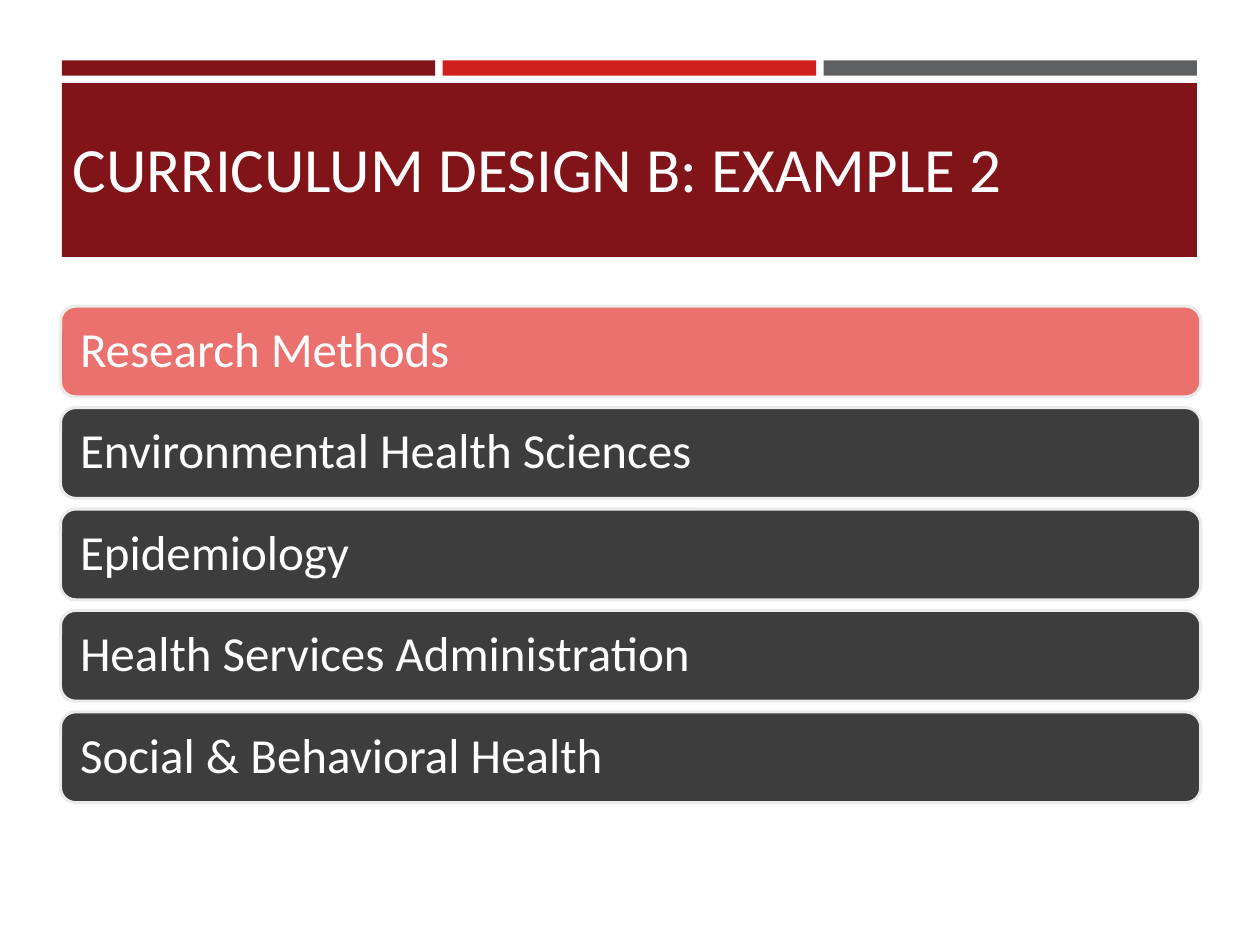
from pptx import Presentation
from pptx.util import Inches, Pt
from pptx.dml.color import RGBColor
from pptx.enum.shapes import MSO_SHAPE as Shape
from pptx.enum.text import MSO_ANCHOR as Anchor, PP_ALIGN as Align

HUES = {"wine": "811419", "red": "D0201C", "gray": "5F6062", "rose": "EB716E",
        "dark": "3D3D3D", "edge": "EBEBEB", "title": "FFFEFF", "white": "FFFFFF"}

deck = Presentation()
deck.slide_width, deck.slide_height = Inches(10), Inches(7.5)
slide = deck.slides.add_slide(deck.slide_layouts[6])


def block(kind, left, top, width, height, hue):
    box = slide.shapes.add_shape(kind, *map(Inches, (left, top, width, height)))
    box.shadow.inherit = False
    box.fill.solid()
    box.fill.fore_color.rgb = RGBColor.from_string(HUES[hue])
    box.line.fill.background()
    return box


def write(box, text, size, hue):
    """Put one left-aligned, vertically centred line into the box."""
    frame = box.text_frame
    frame.word_wrap = True
    frame.vertical_anchor = Anchor.MIDDLE
    frame.text = text
    para = frame.paragraphs[0]
    para.alignment = Align.LEFT
    para.font.name = "Calibri"
    para.font.size = Pt(size)
    para.font.color.rgb = RGBColor.from_string(HUES[hue])
    return frame, para


# Header: three strips over a title band
left, wide, gap = 0.49, 9.01, 0.06
strip = (wide - 2 * gap) / 3
for col, hue in enumerate(("wine", "red", "gray")):
    block(Shape.RECTANGLE, left + col * (strip + gap), 0.48, strip, 0.12, hue)
block(Shape.RECTANGLE, left, 0.66, wide, 1.38, "wine")
title = slide.shapes.add_textbox(*map(Inches, (0.48, 0.77, 9.05, 1.11)))
write(title, "CURRICULUM DESIGN B: EXAMPLE 2", 36, "title")

# Course bars, evenly stacked
first, pitch = 2.43, 0.805
courses = ["Research Methods", "Environmental Health Sciences", "Epidemiology",
           "Health Services Administration", "Social & Behavioral Health"]
for row, course in enumerate(courses):
    bar = block(Shape.ROUNDED_RECTANGLE, 0.48, first + row * pitch, 9.05, 0.72,
                "dark" if row else "rose")
    bar.line.color.rgb = RGBColor.from_string(HUES["edge"])
    bar.line.width = Pt(1.75)
    frame, para = write(bar, course, 28, "white")
    frame.margin_left = frame.margin_right = Inches(0.12)
    frame.margin_top = frame.margin_bottom = Inches(0.12)
    para.line_spacing = 0.9

deck.save("out.pptx")
